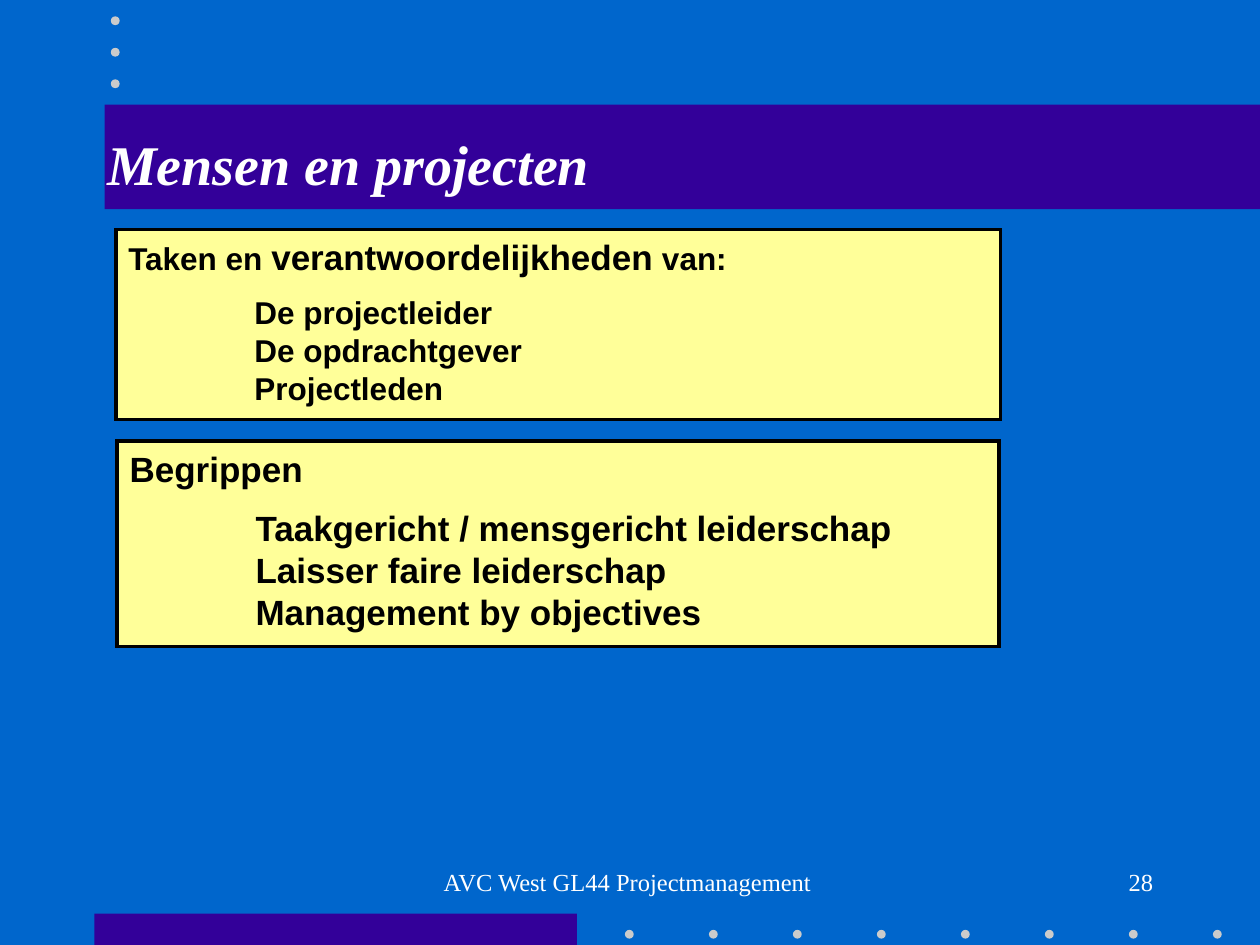
"""Build the slide on people and projects with two framed text panels."""
import dataclasses

import lxml.etree
import pptx
import pptx.dml.color
import pptx.enum.shapes
import pptx.enum.text
import pptx.oxml.ns
import pptx.util

Inches = pptx.util.Inches
Pt = pptx.util.Pt
RGBColor = pptx.dml.color.RGBColor
MSO_SHAPE = pptx.enum.shapes.MSO_SHAPE
PP_ALIGN = pptx.enum.text.PP_ALIGN
MSO_ANCHOR = pptx.enum.text.MSO_ANCHOR
MSO_AUTO_SIZE = pptx.enum.text.MSO_AUTO_SIZE
qn = pptx.oxml.ns.qn


@dataclasses.dataclass(frozen=True)
class Theme:
    background: RGBColor = RGBColor(0x00, 0x66, 0xCC)
    band: RGBColor = RGBColor(0x33, 0x00, 0x99)
    dot: RGBColor = RGBColor(0xCB, 0xCB, 0xCB)
    panel: RGBColor = RGBColor(0xFF, 0xFF, 0x99)
    dark: RGBColor = RGBColor(0x00, 0x00, 0x00)
    light: RGBColor = RGBColor(0xFF, 0xFF, 0xFF)
    serif: str = "Times New Roman"
    sans: str = "Arial"
    title_size: int = 32
    large_size: int = 20
    body_size: int = 18
    footer_size: int = 14


theme = Theme()


def add_filled_shape(kind, left, top, width, height, color):
    shape = slide.shapes.add_shape(
        kind, Inches(left), Inches(top), Inches(width), Inches(height)
    )
    shape.shadow.inherit = False
    shape.fill.solid()
    shape.fill.fore_color.rgb = color
    shape.line.fill.background()
    return shape


def set_font(font, name, size, color, bold=False, italic=False):
    font.name = name
    font.size = Pt(size)
    font.color.rgb = color
    font.bold = bold
    font.italic = italic


presentation = pptx.Presentation()
presentation.slide_width = Inches(10)
presentation.slide_height = Inches(7.5)
slide = presentation.slides.add_slide(presentation.slide_layouts[5])
slide.background.fill.solid()
slide.background.fill.fore_color.rgb = theme.background

title = slide.shapes.title
slide.shapes._spTree.remove(title._element)

add_filled_shape(MSO_SHAPE.RECTANGLE, 0.75, 7.25, 3.83, 0.25, theme.band)
add_filled_shape(MSO_SHAPE.RECTANGLE, 0.83, 0.83, 9.17, 0.83, theme.band)
bottom_dots = [(4.96 + index * 2 / 3, 7.38) for index in range(8)]
top_dots = [(0.88, 0.13 + index * 0.25) for index in range(3)]
for left, top in bottom_dots + top_dots:
    add_filled_shape(MSO_SHAPE.OVAL, left, top, 0.07, 0.07, theme.dot)

slide.shapes._spTree.append(title._element)
title.left, title.top = Inches(0.75), Inches(0.67)
title.width, title.height = Inches(8.5), Inches(1.25)
title.text_frame.text = "Mensen en projecten"
title.text_frame.auto_size = MSO_AUTO_SIZE.NONE
title.text_frame.vertical_anchor = MSO_ANCHOR.MIDDLE
paragraph = title.text_frame.paragraphs[0]
paragraph.alignment = PP_ALIGN.LEFT
set_font(paragraph.font, theme.serif, theme.title_size, theme.light, True, True)

panels = [
    (
        (0.92, 1.82, 7.02, 1.51),
        [
            ("Taken en ", theme.body_size),
            ("verantwoordelijkheden", theme.large_size),
            (" van:", theme.body_size),
        ],
        ["De projectleider", "De opdrachtgever", "Projectleden"],
        theme.body_size,
    ),
    (
        (0.93, 3.5, 7, 1.63),
        [("Begrippen", theme.large_size)],
        [
            "Taakgericht / mensgericht leiderschap",
            "Laisser faire leiderschap",
            "Management by objectives",
        ],
        theme.large_size,
    ),
]
for box, heading, items, item_size in panels:
    panel = add_filled_shape(MSO_SHAPE.RECTANGLE, *box, theme.panel)
    panel.line.color.rgb = theme.dark
    panel.line.width = Pt(2)
    outline = panel.line._get_or_add_ln()
    lxml.etree.SubElement(outline, qn("a:miter"), lim="800000")
    frame = panel.text_frame
    frame.word_wrap = True
    frame.vertical_anchor = MSO_ANCHOR.TOP
    heading_paragraph = frame.paragraphs[0]
    for text, size in heading:
        run = heading_paragraph.add_run()
        run.text = text
        set_font(run.font, theme.sans, size, theme.dark, True)
    list_paragraph = frame.add_paragraph()
    list_paragraph.text = "\v".join("\t" + item for item in items)
    properties = list_paragraph._p.get_or_add_pPr()
    tab_stops = lxml.etree.SubElement(properties, qn("a:tabLst"))
    lxml.etree.SubElement(tab_stops, qn("a:tab"), pos=str(Inches(1)), algn="l")
    list_paragraph.space_before = Pt(item_size / 2)
    set_font(list_paragraph.font, theme.sans, item_size, theme.dark, True)
    for paragraph in frame.paragraphs:
        paragraph.alignment = PP_ALIGN.LEFT

footers = [
    (7.17, 2.08, "28", PP_ALIGN.RIGHT),
    (3.42, 3.17, "AVC West GL44 Projectmanagement ", PP_ALIGN.CENTER),
]
for left, width, text, alignment in footers:
    footer = slide.shapes.add_textbox(
        Inches(left), Inches(6.75), Inches(width), Inches(0.5)
    )
    footer.text_frame.word_wrap = True
    footer.text_frame.vertical_anchor = MSO_ANCHOR.MIDDLE
    paragraph = footer.text_frame.paragraphs[0]
    paragraph.text = text
    paragraph.alignment = alignment
    set_font(paragraph.font, theme.serif, theme.footer_size, theme.light)

presentation.save("out.pptx")
